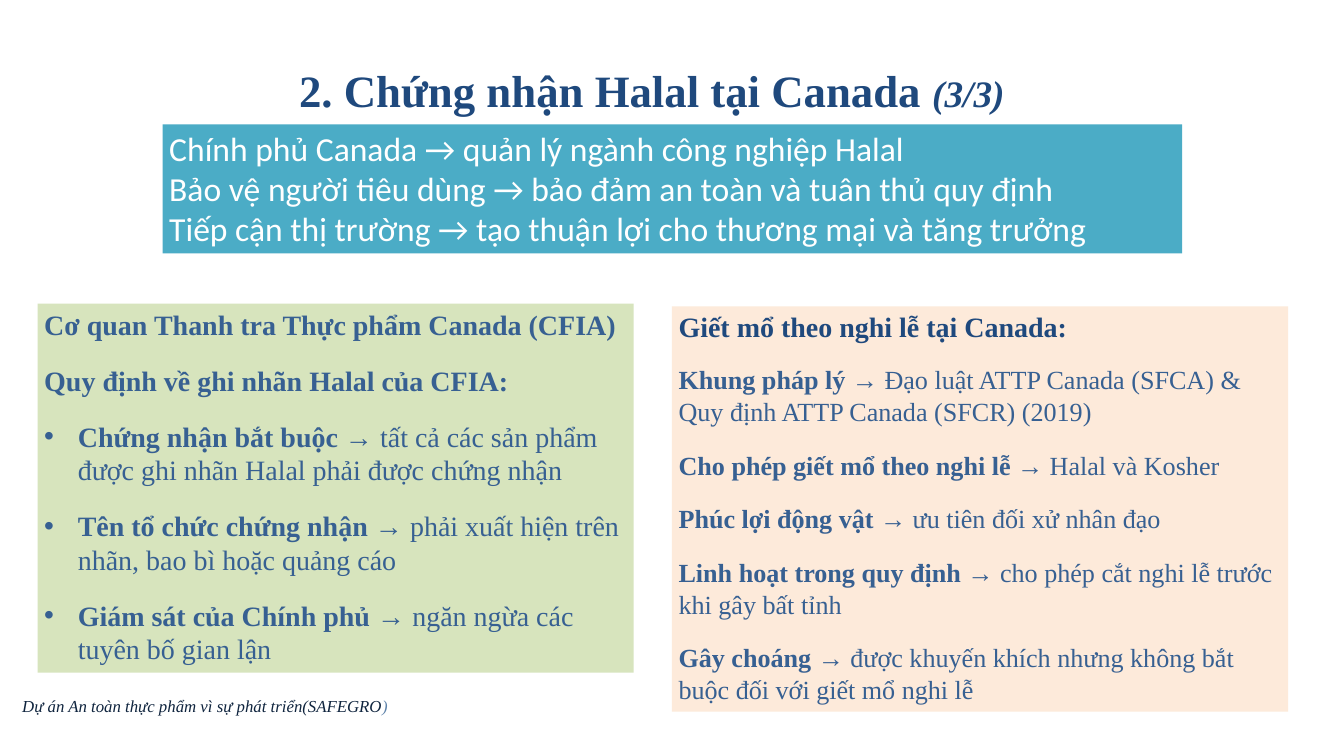
from lxml import etree
from pptx import Presentation
from pptx import util as u
from pptx.dml.color import RGBColor
from pptx.enum import shapes, text
from pptx.oxml.ns import qn

COLORS = {"navy": "1F497D", "blue": "376092", "ink": "0F243E", "pale": "5F84AB",
          "white": "FFFFFF", "teal": "4BACC6", "green": "D7E4BD", "peach": "FDEADA"}
SERIF, SANS = "Times New Roman", "Calibri"

# Run formats
FOOTER = dict(size=18, name=SERIF, color="ink", italic=True)
TITLE = dict(size=48, name=SERIF, color="navy", bold=True)
BANNER = dict(size=36, name=SANS, color="white")
RULE = dict(size=30, name=SERIF, color="blue")
RITE = dict(size=28, name=SERIF, color="blue")

# Paragraph formats
SPACED = dict(space_before=u.Pt(16), space_after=u.Pt(8))
BULLET = dict(SPACED, bullet="•")


def pair(lead, rest, style, layout):
    """A paragraph with a bold lead and a plain explanation."""
    return layout, [(lead, dict(style, bold=True)), (rest, style)]


# Content: place (left, top, width, height), fill, paragraphs (layout, runs)
PARTS = [
    dict(place=(0.33, 10.38, 15.67, 0.28), margin=0, paras=[
        (dict(line_spacing=u.Pt(19.6)),
         [("Dự án An toàn thực phẩm vì sự phát triển(SAFEGRO", FOOTER),
          (")", dict(FOOTER, color="pale"))])]),
    dict(place=(2.49, 0.88, 14.42, 0.91), paras=[
        (dict(alignment=text.PP_ALIGN.CENTER),
         [("2. Chứng nhận Halal tại Canada ", TITLE),
          ("(3/3)", dict(TITLE, size=40, italic=True))])]),
    dict(place=(2.42, 1.85, 15.17, 1.92), fill="teal", paras=[
        ({}, [(line, BANNER)]) for line in (
            "Chính phủ Canada → quản lý ngành công nghiệp Halal",
            "Bảo vệ người tiêu dùng → bảo đảm an toàn và tuân thủ quy định",
            "Tiếp cận thị trường → tạo thuận lợi cho thương mại và tăng trưởng")]),
    dict(place=(0.56, 4.52, 8.87, 5.49), fill="green", paras=[
        (dict(space_after=u.Pt(8)),
         [("Cơ quan Thanh tra Thực phẩm Canada (CFIA)", dict(RULE, bold=True))]),
        (SPACED, [("Quy định về ghi nhãn Halal của CFIA:", dict(RULE, bold=True))]),
        *(pair(lead, rest, RULE, BULLET) for lead, rest in (
            ("Chứng nhận bắt buộc →",
             " tất cả các sản phẩm được ghi nhãn Halal phải được chứng nhận"),
            ("Tên tổ chức chứng nhận →",
             " phải xuất hiện trên nhãn, bao bì hoặc quảng cáo"),
            ("Giám sát của Chính phủ →", " ngăn ngừa các tuyên bố gian lận")))]),
    dict(place=(10, 4.56, 9.17, 6.03), fill="peach", paras=[
        (dict(space_after=u.Pt(6)),
         [("Giết mổ theo nghi lễ tại Canada:", dict(RULE, color="navy", bold=True))]),
        *(pair(lead, rest, RITE, SPACED) for lead, rest in (
            ("Khung pháp lý → ",
             "Đạo luật ATTP Canada (SFCA) & Quy định ATTP Canada (SFCR) (2019)"),
            ("Cho phép giết mổ theo nghi lễ ", "→ Halal và Kosher"),
            ("Phúc lợi động vật ", "→ ưu tiên đối xử nhân đạo"),
            ("Linh hoạt trong quy định ", "→ cho phép cắt nghi lễ trước khi gây bất tỉnh"),
            ("Gây choáng ",
             "→ được khuyến khích nhưng không bắt buộc đối với giết mổ nghi lễ")))]),
]


def rgb(key):
    return RGBColor.from_string(COLORS[key])


def add_bullet(para, mark):
    props = para._p.get_or_add_pPr()
    props.set("marL", str(u.Inches(0.5)))
    props.set("indent", str(-u.Inches(0.5)))
    font = etree.SubElement(props, qn("a:buFont"))
    font.set("typeface", "Arial")
    etree.SubElement(props, qn("a:buChar")).set("char", mark)


def add_run(para, words, style):
    span = para.add_run()
    span.text = words
    for key, value in style.items():
        if key == "color":
            span.font.color.rgb = rgb(value)
        else:
            setattr(span.font, key, u.Pt(value) if key == "size" else value)


def add_part(page, place, paras, fill=None, margin=None):
    area = [u.Inches(length) for length in place]
    if fill:
        box = page.shapes.add_shape(shapes.MSO_SHAPE.RECTANGLE, *area)
        box.shadow.inherit = False
        box.fill.solid()
        box.fill.fore_color.rgb = rgb(fill)
        box.line.fill.background()
    else:
        box = page.shapes.add_textbox(*area)
    frame = box.text_frame
    frame.word_wrap = True
    frame.auto_size = text.MSO_AUTO_SIZE.SHAPE_TO_FIT_TEXT
    frame.vertical_anchor = text.MSO_ANCHOR.TOP
    if margin is not None:
        for side in ("left", "top", "right", "bottom"):
            setattr(frame, f"margin_{side}", u.Inches(margin))
    for number, (layout, runs) in enumerate(paras):
        para = frame.add_paragraph() if number else frame.paragraphs[0]
        para.alignment = text.PP_ALIGN.LEFT
        for key, value in layout.items():
            if key == "bullet":
                add_bullet(para, value)
            else:
                setattr(para, key, value)
        for words, style in runs:
            add_run(para, words, style)


def main():
    deck = Presentation()
    deck.slide_width, deck.slide_height = u.Inches(20), u.Inches(11.25)
    page = deck.slides.add_slide(deck.slide_layouts[6])
    for part in PARTS:
        add_part(page, **part)
    deck.save("out.pptx")


if __name__ == "__main__":
    main()
